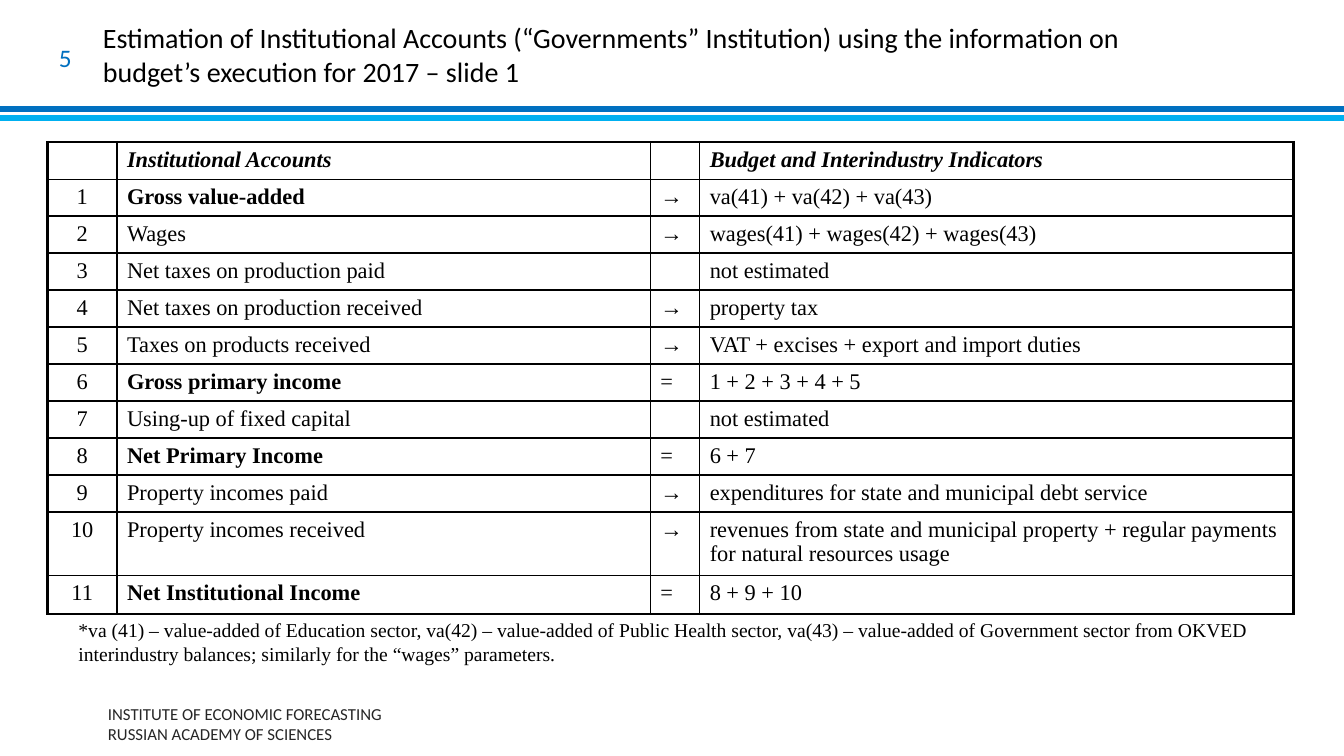
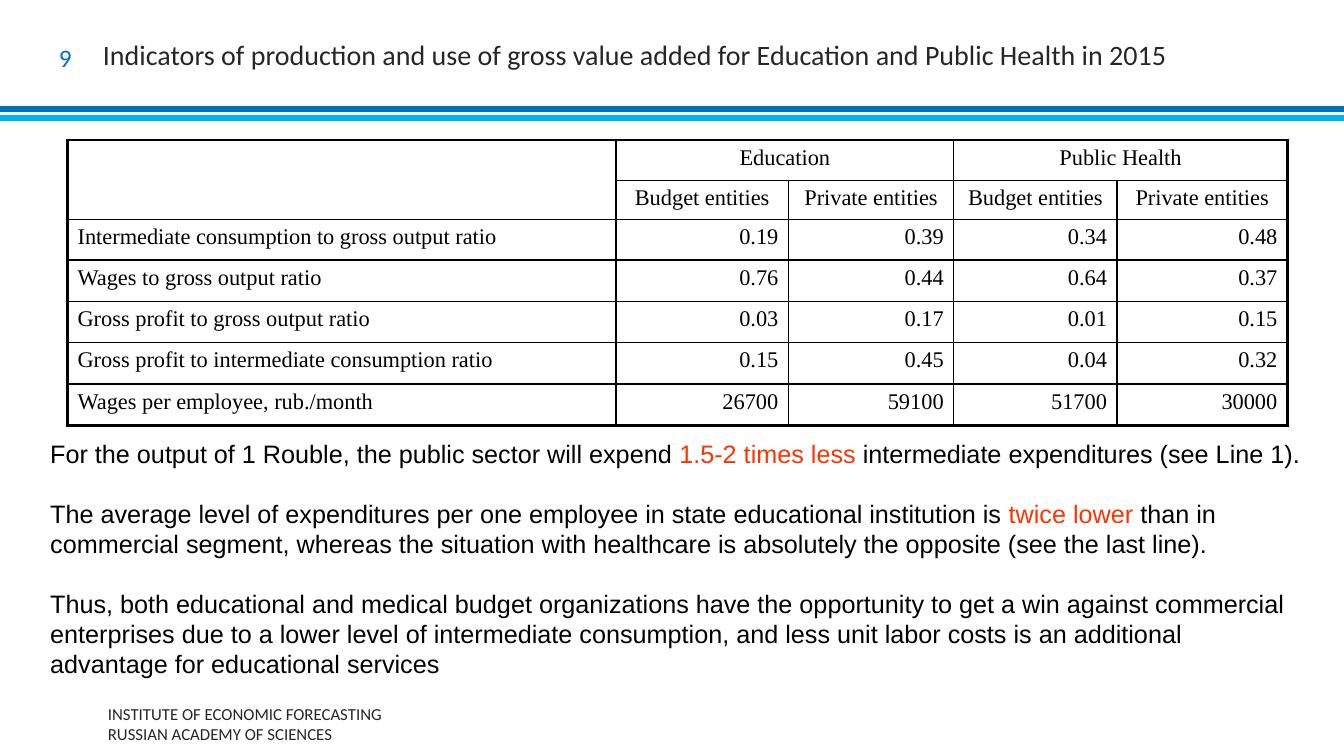
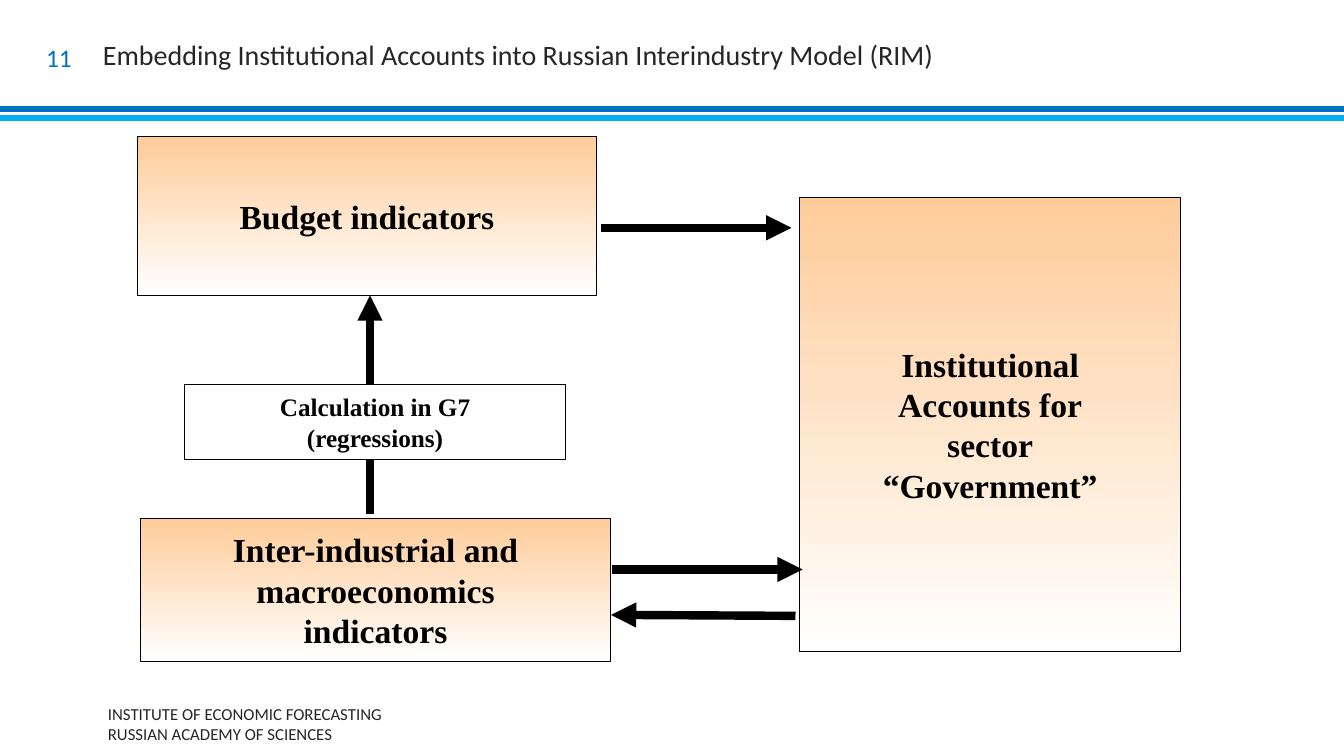
from lxml import etree
from pptx import Presentation
from pptx.dml.color import RGBColor
from pptx.enum.shapes import MSO_CONNECTOR, MSO_SHAPE
from pptx.enum.text import MSO_ANCHOR, PP_ALIGN
from pptx.oxml.ns import qn
from pptx.util import Inches, Pt

LEFT, MID, RIGHT = PP_ALIGN.LEFT, PP_ALIGN.CENTER, PP_ALIGN.RIGHT
CENTRE = MSO_ANCHOR.MIDDLE
RECT = MSO_SHAPE.RECTANGLE
LINE = MSO_CONNECTOR.STRAIGHT
BLACK, DARK, WHITE = "000000", "262626", "FFFFFF"
BLUE, SKY, RED, PEACH = "0070C0", "00B0F0", "FF3300", "FFCC99"
SANS, SERIF, PLAIN = "Calibri", "Times New Roman", "Arial"
rgb = RGBColor.from_string


def write(frame, paras, font, size, hue, align=LEFT, bold=False, italic=False, gap=0):
    for i, text in enumerate(paras):
        para = frame.add_paragraph() if i else frame.paragraphs[0]
        para.alignment = align
        if i and gap:
            para.space_before = Pt(gap)
        for n, part in enumerate(text.split("|")):
            if not part:
                etree.SubElement(para._p, qn("a:endParaRPr"), sz=str(size * 100))
                continue
            run = para.add_run()
            run.text = part
            run.font.name = font
            run.font.size = Pt(size)
            run.font.bold = bold
            run.font.italic = italic
            run.font.color.rgb = rgb(RED if n % 2 else hue)


def draw(slide, ends, hue, width, head=False):
    line = slide.shapes.add_connector(LINE, *[Inches(v) for v in ends])
    line.line.color.rgb = rgb(hue)
    line.line.width = Pt(width)
    props = line._element.spPr
    if head:
        etree.SubElement(props.find(qn("a:ln")), qn("a:tailEnd"), type="triangle")
    etree.SubElement(props, qn("a:effectLst"))


deck = Presentation()
deck.slide_width, deck.slide_height = Inches(13.33), Inches(7.5)
blank = deck.slide_layouts[6]

heads = [
    ("5", BLACK, "Estimation of Institutional Accounts (“Governments” Institution) "
     "using the information on budget’s execution for 2017 – slide 1"),
    ("9", DARK, "Indicators of production and use of gross value added "
     "for Education and Public Health in 2015"),
    ("11", DARK, "Embedding Institutional Accounts into Russian Interindustry Model (RIM)"),
]
footer = ["INSTITUTE OF ECONOMIC FORECASTING", "RUSSIAN ACADEMY OF SCIENCES"]
legend = [
    "*va (41) – value-added of Education sector, va(42) – value-added of Public Health "
    "sector, va(43) – value-added of Government sector from OKVED interindustry balances; "
    "similarly for the “wages” parameters.",
]
notes = [
    "For the output of 1 Rouble, the public sector will expend |1.5-2 times less| "
    "intermediate expenditures (see Line 1).",
    "The average level of expenditures per one employee in state educational institution is "
    "|twice lower| than in commercial segment, whereas the situation with healthcare is "
    "absolutely the opposite (see the last line).",
    "Thus, both educational and medical budget organizations have the opportunity to get a "
    "win against commercial enterprises due to a lower level of intermediate consumption, "
    "and less unit labor costs is an additional advantage for educational services",
]

slides = []
texts = []
for number, hue, title in heads:
    slide = deck.slides.add_slide(blank)
    slides.append(slide)
    draw(slide, (0, 1.08, 13.33, 1.08), BLUE, 4)
    draw(slide, (0, 1.17, 13.33, 1.17), SKY, 4)
    texts += [
        (slide, (1.07, 6.98, 4.59, 0.4), footer, SANS, 12, DARK, LEFT, 0, 0),
        (slide, (1.02, 0, 10.88, 1.08), [title], SANS, 20, hue, LEFT, 0, 0),
        (slide, (0.2, 0.37, 0.61, 0.4), [number], SANS, 18, BLUE, RIGHT, 0.1, 0),
    ]
first, second, third = slides
texts += [
    (first, (0.68, 6.08, 11.97, 0.57), legend, SERIF, 14, BLACK, LEFT, 0.1, 0),
    (second, (0.4, 4.29, 12.66, 2.5), notes, PLAIN, 18, BLACK, LEFT, 0.1, 21),
]

for slide, place, paras, font, size, hue, align, inset, gap in texts:
    frame = slide.shapes.add_textbox(*[Inches(v) for v in place]).text_frame
    frame.word_wrap = True
    frame.vertical_anchor = CENTRE
    frame.margin_left = frame.margin_right = Inches(inset)
    frame.margin_top = frame.margin_bottom = Inches(inset / 2)
    write(frame, paras, font, size, hue, align, gap=gap)

accounts = [
    ("", "Institutional Accounts", "", "Budget and Interindustry Indicators"),
    ("1", "Gross value-added", "→", "va(41) + va(42) + va(43)"),
    ("2", "Wages", "→", "wages(41) + wages(42) + wages(43)"),
    ("3", "Net taxes on production paid", "", "not estimated"),
    ("4", "Net taxes on production received", "→", "property tax"),
    ("5", "Taxes on products received", "→", "VAT + excises + export and import duties"),
    ("6", "Gross primary income", "=", "1 + 2 + 3 + 4 + 5"),
    ("7", "Using-up of fixed capital", "", "not estimated"),
    ("8", "Net Primary Income", "=", "6 + 7"),
    ("9", "Property incomes paid", "→", "expenditures for state and municipal debt service"),
    ("10", "Property incomes received", "→", "revenues from state and municipal property "
     "+ regular payments for natural resources usage"),
    ("11", "Net Institutional Income", "=", "8 + 9 + 10"),
]
ratios = [
    ("", "Education", "", "Public Health", ""),
    ("", "Budget entities", "Private entities", "Budget entities", "Private entities"),
    ("Intermediate consumption to gross output ratio", "0.19", "0.39", "0.34", "0.48"),
    ("Wages to gross output ratio", "0.76", "0.44", "0.64", "0.37"),
    ("Gross profit to gross output ratio", "0.03", "0.17", "0.01", "0.15"),
    ("Gross profit to intermediate consumption ratio", "0.15", "0.45", "0.04", "0.32"),
    ("Wages per employee, rub./month", "26700", "59100", "51700", "30000"),
]
slant = accounts[0]
strong = slant + ("Gross value-added", "Gross primary income",
                  "Net Primary Income", "Net Institutional Income")
spans = [((0, 0), (1, 0)), ((0, 1), (0, 2)), ((0, 3), (0, 4))]
tables = [
    (first, 0.47, 1.41, accounts, (0.69, 5.29, 0.49, 5.89),
     [0.34] * 10 + [0.59, 0.38], [], 0, (MID, LEFT, LEFT, LEFT)),
    (second, 0.67, 1.39, ratios, (5.44, 1.71, 1.64, 1.62, 1.69),
     [0.4, 0.39, 0.4] + [0.41] * 4, spans, 2, (LEFT,) + (RIGHT,) * 4),
]

for slide, x, y, rows, wide, high, spans, top, aligns in tables:
    place = [Inches(v) for v in (x, y, sum(wide), sum(high))]
    table = slide.shapes.add_table(len(high), len(wide), *place).table
    table.first_row = table.horz_banding = False
    for col, size in zip(table.columns, wide):
        col.width = Inches(size)
    for row, size in zip(table.rows, high):
        row.height = Inches(size)
    for start, end in spans:
        table.cell(*start).merge(table.cell(*end))
    for r, row in enumerate(rows):
        for c, text in enumerate(row):
            cell = table.cell(r, c)
            align = MID if r < top else aligns[c]
            write(cell.text_frame, [text], SERIF, 16, BLACK, align,
                  text in strong, text in slant)
            cell.fill.background()
            props = cell._tc.get_or_add_tcPr()
            edges = [
                ("L", c == 0),
                ("R", c + cell.span_width == len(wide)),
                ("T", r == 0),
                ("B", r + cell.span_height == len(high)),
            ]
            for n, (side, outer) in enumerate(edges):
                edge = etree.Element(qn("a:ln" + side), w=str(Pt(2.25 if outer else 1)))
                fill = etree.SubElement(edge, qn("a:solidFill"))
                etree.SubElement(fill, qn("a:srgbClr"), val=BLACK)
                props.insert(n, edge)

scheme = [
    ((1.36, 1.35, 4.56, 1.58), ["Budget indicators"], 24),
    ((1.39, 5.14, 4.67, 1.42), ["Inter-industrial and", "macroeconomics", "indicators"], 24),
    ((7.93, 1.96, 3.78, 4.5),
     ["Institutional", "Accounts for", "sector", "“Government”"], 24),
    ((5.96, 2.26, 7.85, 2.26), [], 0),
    ((6.07, 5.65, 7.96, 5.65), [], 0),
    ((3.67, 5.1, 3.67, 2.93), [], 0),
    ((7.89, 6.11, 6.06, 6.1), [], 0),
    ((1.83, 3.81, 3.78, 0.75), ["Calculation in G7", "(regressions)"], 18),
]
for place, paras, size in scheme:
    if not paras:
        draw(third, place, BLACK, 6, True)
        continue
    box = third.shapes.add_shape(RECT, *[Inches(v) for v in place])
    box.shadow.inherit = False
    box.line.color.rgb = rgb(BLACK)
    box.line.width = Pt(0.75)
    if size == 24:
        box.fill.gradient()
        box.fill.gradient_angle = 270
        for stop, hue in zip(box.fill.gradient_stops, (PEACH, WHITE)):
            stop.color.rgb = rgb(hue)
    else:
        box.fill.solid()
        box.fill.fore_color.rgb = rgb(WHITE)
    box.text_frame.word_wrap = False
    box.text_frame.vertical_anchor = CENTRE
    write(box.text_frame, paras, SERIF, size, BLACK, MID, True)

deck.save("out.pptx")
